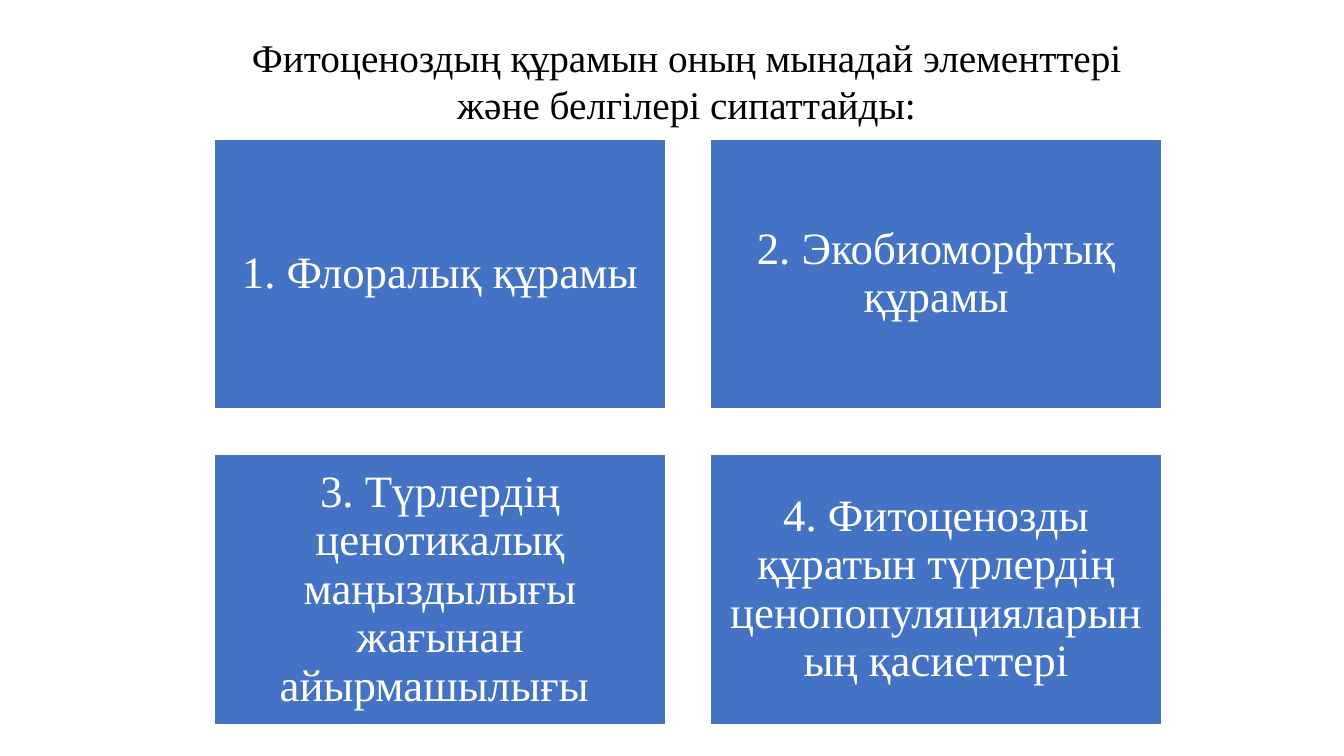
from dataclasses import dataclass

from pptx import Presentation
from pptx.dml.color import RGBColor as Rgb
from pptx.enum.shapes import MSO_SHAPE as Kind
from pptx.enum.text import MSO_ANCHOR as Anchor, MSO_AUTO_SIZE as Fit, PP_ALIGN as Align
from pptx.shapes.autoshape import Shape
from pptx.slide import Slide
from pptx.util import Inches, Pt

COLORS = {"text": "000000", "box": "4472C4", "white": "FFFFFF"}
FONT = "Times New Roman"
TITLE = "Фитоценоздың құрамын оның мынадай элементтері және белгілері сипаттайды:"
TRAITS = [
    "1. Флоралық құрамы",
    "2. Экобиоморфтық құрамы",
    "3. Түрлердің ценотикалық маңыздылығы жағынан айырмашылығы ",
    "4. Фитоценозды құратын түрлердің ценопопуляцияларының қасиеттері",
]
COLS = 2
LEFT, TOP = 2.13, 1.38
WIDTH, HEIGHT, GAP = 4.47, 2.68, 0.45


@dataclass
class Box:
    text: str
    left: float
    top: float


def color(name: str) -> Rgb:
    return Rgb.from_string(COLORS[name])


def write(shape: Shape, text: str, *, size: int, ink: str, anchor: Anchor,
          pad: tuple[float, float], space: float = 1.0) -> None:
    """Fill the shape with one centred paragraph; pad is (side, top) in inches."""
    frame = shape.text_frame
    frame.text = text
    frame.word_wrap = True
    frame.auto_size = Fit.NONE
    frame.vertical_anchor = anchor
    frame.margin_left = frame.margin_right = Inches(pad[0])
    frame.margin_top = frame.margin_bottom = Inches(pad[1])
    para = frame.paragraphs[0]
    para.alignment = Align.CENTER
    para.line_spacing = space
    font = para.runs[0].font
    font.name, font.size = FONT, Pt(size)
    font.color.rgb = color(ink)


def add_title(slide: Slide) -> None:
    title = slide.shapes.title
    title.left, title.top = Inches(LEFT), Inches(0.28)
    title.width, title.height = Inches(9.36), Inches(1.04)
    write(title, TITLE, size=28, ink="text", anchor=Anchor.TOP, pad=(0.1, 0.05))


def add_box(slide: Slide, box: Box) -> None:
    shape = slide.shapes.add_shape(
        Kind.RECTANGLE, Inches(box.left), Inches(box.top), Inches(WIDTH), Inches(HEIGHT))
    shape.shadow.inherit = False
    shape.fill.solid()
    shape.fill.fore_color.rgb = color("box")
    shape.line.color.rgb = color("white")
    shape.line.width = Pt(1)
    write(shape, box.text, size=32, ink="white", anchor=Anchor.MIDDLE,
          pad=(0.13, 0.13), space=0.9)


def main() -> None:
    deck = Presentation()
    deck.slide_width, deck.slide_height = Inches(13.33), Inches(7.5)
    slide = deck.slides.add_slide(deck.slide_layouts.get_by_name("Title Only"))
    add_title(slide)
    for i, text in enumerate(TRAITS):
        row, col = divmod(i, COLS)
        add_box(slide, Box(text, LEFT + col * (WIDTH + GAP), TOP + row * (HEIGHT + GAP)))
    deck.save("out.pptx")


if __name__ == "__main__":
    main()
